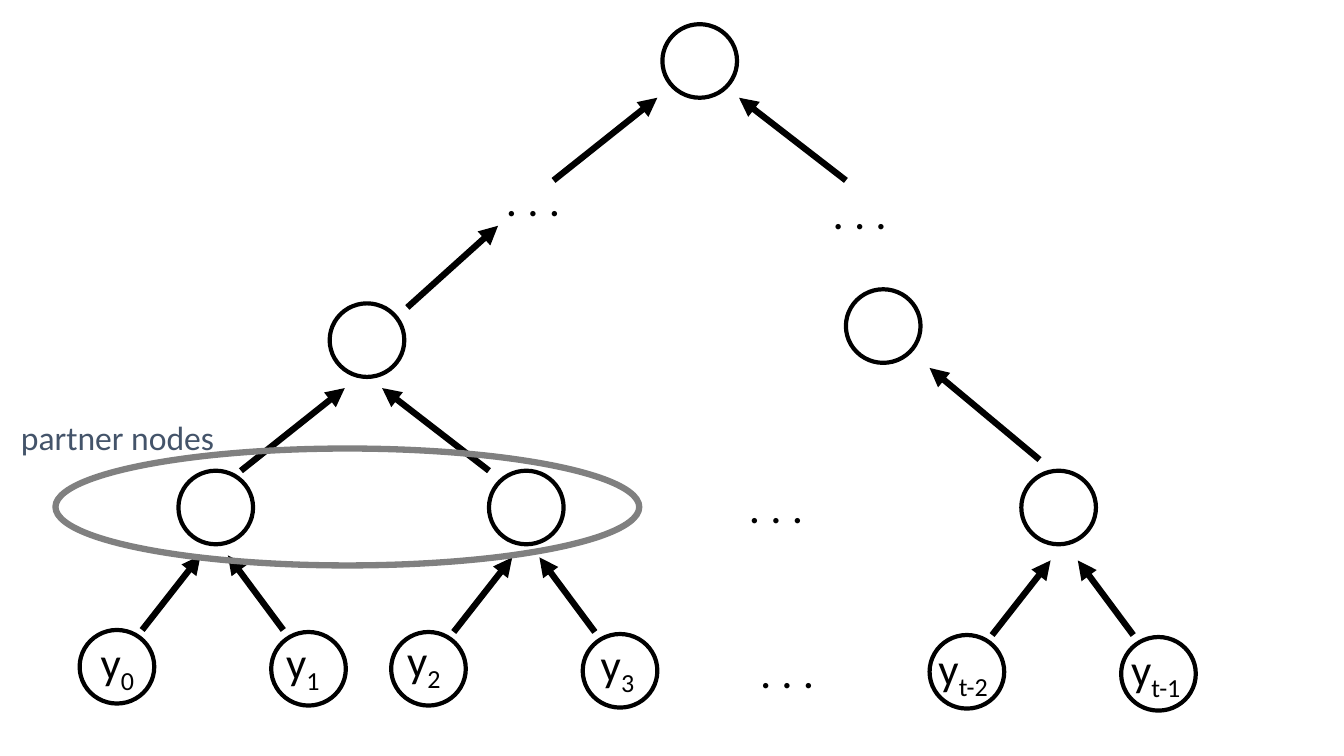
import pptx
import pptx.dml.color
import pptx.enum.shapes
import pptx.enum.text
import pptx.oxml
import pptx.oxml.ns
import pptx.util
from pptx.util import Inches

BLACK = pptx.dml.color.RGBColor(0x00, 0x00, 0x00)
GRAY = pptx.dml.color.RGBColor(0x80, 0x80, 0x80)
SLATE = pptx.dml.color.RGBColor(0x44, 0x54, 0x6A)

NODE_WIDTH, NODE_HEIGHT = 0.74, 0.73
LABEL_WIDTH, LABEL_HEIGHT = 0.84, 0.64
NODE_LINE, THICK_LINE = 3, 4.5
SUBSCRIPT = "-25000"

# Inner nodes of the tree: left, top
INNER_NODES = [(1.77, 4.67), (4.85, 4.67), (3.27, 3.01),
               (10.13, 4.67), (8.39, 2.87), (6.57, 0.24)]

# Arrows above the leaf level: start x, start y, end x, end y
INNER_ARROWS = [(2.39, 4.67, 3.42, 3.85), (4.85, 4.67, 3.79, 3.85),
                (10.31, 4.56, 9.22, 3.65), (4.04, 3.05, 4.94, 2.24),
                (5.49, 1.79, 6.52, 0.97), (8.39, 1.79, 7.33, 0.97)]

# Leaf pairs: left and top of the first leaf
LEAF_PAIRS = [(0.79, 6.25), (3.88, 6.27), (9.22, 6.30)]
LEAF_STEP = (1.90, 0.02)
LEAF_ARROWS = [(0.62, 0, 1.20, -0.74), (2.02, 0, 1.47, -0.74)]

# Leaf labels: subscript, left, top
LEAF_LABELS = [("0", 0.90, 6.25), ("1", 2.74, 6.25), ("2", 3.94, 6.23),
               ("3", 5.86, 6.27), ("t-2", 9.21, 6.31), ("t-1", 11.12, 6.32)]

ELLIPSES = [(7.44, 6.34), (7.33, 4.70), (4.92, 1.65), (8.16, 1.78)]


def set_format(target, values):
    for name, value in values.items():
        setattr(target, name, value)


def set_line(line, color, width):
    line.color.rgb = color
    line.width = pptx.util.Pt(width)


def add_oval(slide, left, top, width=NODE_WIDTH, height=NODE_HEIGHT,
             color=BLACK, line_width=NODE_LINE):
    shape = slide.shapes.add_shape(
        pptx.enum.shapes.MSO_SHAPE.OVAL,
        Inches(left), Inches(top), Inches(width), Inches(height))
    shape.shadow.inherit = False
    shape.fill.background()
    set_line(shape.line, color, line_width)


def add_arrow(slide, start_x, start_y, end_x, end_y):
    connector = slide.shapes.add_connector(
        pptx.enum.shapes.MSO_CONNECTOR.STRAIGHT,
        Inches(start_x), Inches(start_y), Inches(end_x), Inches(end_y))
    set_line(connector.line, BLACK, THICK_LINE)
    # Arrowhead at the end, and no shadow
    arrowhead = pptx.oxml.parse_xml(
        f'<a:tailEnd {pptx.oxml.ns.nsdecls("a")} type="triangle"/>')
    connector.line._get_or_add_ln().append(arrowhead)
    connector._element.spPr.append(pptx.oxml.parse_xml(
        f'<a:effectLst {pptx.oxml.ns.nsdecls("a")}/>'))


def add_label(slide, text, left, top, width=LABEL_WIDTH, height=LABEL_HEIGHT,
              size=32, color=BLACK, subscript=""):
    box = slide.shapes.add_textbox(
        Inches(left), Inches(top), Inches(width), Inches(height))
    set_format(box.text_frame, {
        "word_wrap": True,
        "auto_size": pptx.enum.text.MSO_AUTO_SIZE.SHAPE_TO_FIT_TEXT})
    paragraph = box.text_frame.paragraphs[0]
    for part in filter(None, (text, subscript)):
        run = paragraph.add_run()
        run.text = part
        set_format(run.font, {"name": "Calibri", "size": pptx.util.Pt(size)})
        run.font.color.rgb = color
    if subscript:
        run._r.get_or_add_rPr().set("baseline", SUBSCRIPT)


def add_leaf_pair(slide, left, top):
    step_x, step_y = LEAF_STEP
    for index in range(2):
        add_oval(slide, left + index * step_x, top + index * step_y)
    for start_x, start_y, end_x, end_y in LEAF_ARROWS:
        add_arrow(slide, left + start_x, top + start_y,
                  left + end_x, top + end_y)


def main():
    presentation = pptx.Presentation()
    set_format(presentation, {"slide_width": Inches(13.33),
                              "slide_height": Inches(7.5)})
    slide = presentation.slides.add_slide(presentation.slide_layouts[6])

    # Tree
    for pair in LEAF_PAIRS:
        add_leaf_pair(slide, *pair)
    for node in INNER_NODES:
        add_oval(slide, *node)
    for arrow in INNER_ARROWS:
        add_arrow(slide, *arrow)
    for left, top in ELLIPSES:
        add_label(slide, ". . .", left, top)

    # Ring around the partner nodes
    add_oval(slide, 0.55, 4.45, 5.79, 1.16, GRAY, THICK_LINE)
    add_label(slide, "partner nodes", 0.11, 4.09, 2.54, 0.5, 24, SLATE)

    # Leaf labels
    for subscript, left, top in LEAF_LABELS:
        add_label(slide, "y", left, top, subscript=subscript)

    presentation.save("out.pptx")


if __name__ == "__main__":
    main()
